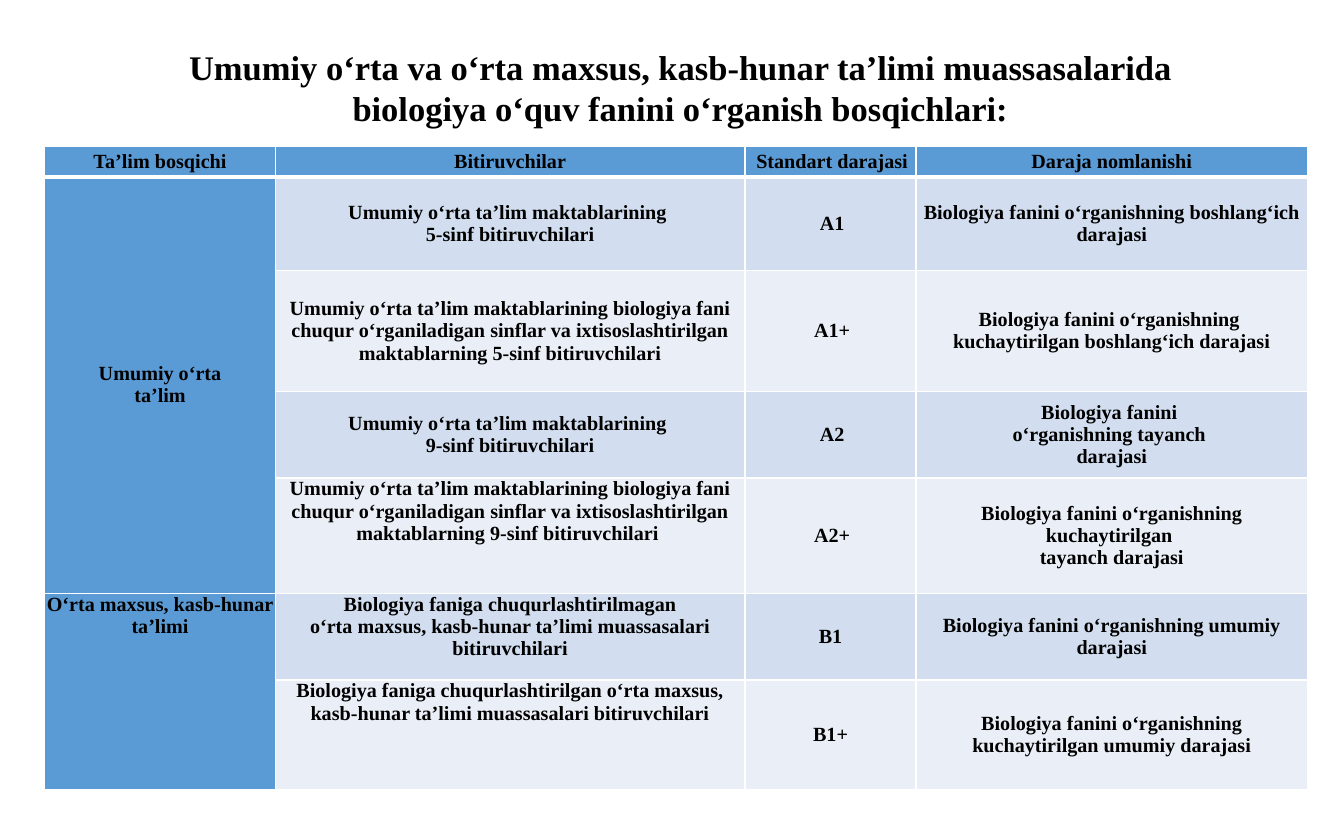
from dataclasses import dataclass

from lxml.etree import SubElement
from pptx import Presentation
from pptx.dml.color import RGBColor
from pptx.enum.text import MSO_ANCHOR, PP_ALIGN
from pptx.oxml.ns import qn
from pptx.slide import Slide
from pptx.table import Table, _Cell
from pptx.text.text import TextFrame
from pptx.util import Cm, Pt

BLACK = RGBColor(0x00, 0x00, 0x00)
WHITE = RGBColor(0xFF, 0xFF, 0xFF)
HEADER_BLUE = RGBColor(0x5B, 0x9B, 0xD5)
BAND_COLORS = (RGBColor(0xD2, 0xDE, 0xEF), RGBColor(0xEA, 0xEF, 0xF7))

CM_PER_INCH = 2.54
SLIDE_WIDTH = Cm(12.99 * CM_PER_INCH)
SLIDE_HEIGHT = Cm(7.88 * CM_PER_INCH)
COLUMN_WIDTHS = (5.66, 11.53, 4.2, 9.61)
LEVEL_COLUMN = 2
LEVEL_INDENT = Cm(0.08)
TITLE = (
    "Umumiy o‘rta va o‘rta maxsus, kasb-hunar ta’limi muassasalarida "
    "biologiya o‘quv fanini o‘rganish bosqichlari:"
)
CELL_FORMAT = {
    "margin_left": 0,
    "margin_right": 0,
    "margin_top": 0,
    "margin_bottom": 0,
}


@dataclass(frozen=True)
class StageRow:
    height: float
    stage: str
    graduates: str
    level: str
    level_name: str
    stage_span: int = 1
    top_columns: tuple[int, ...] = ()
    indented: bool = True

    def texts(self) -> tuple[str, ...]:
        return self.stage, self.graduates, self.level, self.level_name


ROWS = (
    StageRow(0.75, "Ta’lim bosqichi", "Bitiruvchilar", "Standart darajasi", "Daraja nomlanishi"),
    StageRow(
        2.31,
        "Umumiy o‘rta\nta’lim",
        "Umumiy o‘rta ta’lim maktablarining \n5-sinf bitiruvchilari",
        "A1",
        "Biologiya fanini o‘rganishning boshlang‘ich darajasi",
        stage_span=4,
    ),
    StageRow(
        2.96,
        "",
        "Umumiy o‘rta ta’lim maktablarining biologiya fani chuqur o‘rganiladigan "
        "sinflar va ixtisoslashtirilgan maktablarning 5-sinf bitiruvchilari",
        "A1+",
        "Biologiya fanini o‘rganishning \nkuchaytirilgan boshlang‘ich darajasi",
    ),
    StageRow(
        2.13,
        "",
        "Umumiy o‘rta ta’lim maktablarining \n9-sinf bitiruvchilari",
        "A2",
        "Biologiya fanini \no‘rganishning tayanch \ndarajasi",
    ),
    StageRow(
        2.83,
        "",
        "Umumiy o‘rta ta’lim maktablarining biologiya fani chuqur o‘rganiladigan "
        "sinflar va ixtisoslashtirilgan maktablarning 9-sinf bitiruvchilari ",
        "A2+",
        "Biologiya fanini o‘rganishning kuchaytirilgan \ntayanch darajasi",
        top_columns=(1,),
    ),
    StageRow(
        2.13,
        "O‘rta maxsus, kasb-hunar ta’limi",
        "Biologiya faniga chuqurlashtirilmagan\n"
        "o‘rta maxsus, kasb-hunar ta’limi muassasalari bitiruvchilari",
        "B1",
        "Biologiya fanini o‘rganishning umumiy darajasi",
        stage_span=2,
        top_columns=(0, 1),
        indented=False,
    ),
    StageRow(
        2.69,
        "",
        "Biologiya faniga chuqurlashtirilgan o‘rta maxsus, kasb-hunar ta’limi "
        "muassasalari bitiruvchilari",
        "B1+",
        "Biologiya fanini o‘rganishning kuchaytirilgan umumiy darajasi",
        top_columns=(1,),
        indented=False,
    ),
)


def write_text(text_frame: TextFrame, text: str, size: int, indent: int = 0) -> None:
    text_frame.text = text
    font_format = {"name": "Times New Roman", "size": Pt(size), "bold": True}
    for paragraph in text_frame.paragraphs:
        paragraph.alignment = PP_ALIGN.CENTER
        if indent:
            paragraph._p.get_or_add_pPr().set("indent", str(indent))
        for run in paragraph.runs:
            for attribute, value in font_format.items():
                setattr(run.font, attribute, value)
            run.font.color.rgb = BLACK


def draw_borders(cell: _Cell, row_index: int) -> None:
    properties = cell._tc.get_or_add_tcPr()
    widths = {
        "lnL": 1,
        "lnR": 1,
        "lnT": 3 if row_index == 1 else 1,
        "lnB": 3 if row_index == 0 else 1,
    }
    for side, width in widths.items():
        line = SubElement(properties, qn(f"a:{side}"), w=str(Pt(width)))
        fill = SubElement(line, qn("a:solidFill"))
        SubElement(fill, qn("a:srgbClr"), val=str(WHITE))


def draw_row(table: Table, row_index: int, row: StageRow) -> None:
    table.rows[row_index].height = Cm(row.height)
    for column_index, text in enumerate(row.texts()):
        cell = table.cell(row_index, column_index)
        for attribute, value in CELL_FORMAT.items():
            setattr(cell, attribute, value)
        is_top = column_index in row.top_columns
        cell.vertical_anchor = MSO_ANCHOR.TOP if is_top else MSO_ANCHOR.MIDDLE
        draw_borders(cell, row_index)
        is_header = row_index == 0 or column_index == 0
        cell.fill.solid()
        cell.fill.fore_color.rgb = HEADER_BLUE if is_header else BAND_COLORS[(row_index - 1) % 2]
        is_indented = row.indented and column_index == LEVEL_COLUMN
        write_text(cell.text_frame, text, 14, LEVEL_INDENT if is_indented else 0)
    if row.stage_span > 1:
        last_row = row_index + row.stage_span - 1
        table.cell(row_index, 0).merge(table.cell(last_row, 0))


def draw_title(slide: Slide) -> None:
    title = slide.shapes.add_textbox(Cm(3.9), Cm(1), Cm(25.6), Cm(3.33))
    title.text_frame.word_wrap = True
    write_text(title.text_frame, TITLE, 24)


def draw_table(slide: Slide) -> None:
    table = slide.shapes.add_table(
        len(ROWS),
        len(COLUMN_WIDTHS),
        Cm(1.1),
        Cm(3.59),
        Cm(sum(COLUMN_WIDTHS)),
        Cm(sum(row.height for row in ROWS)),
    ).table
    for column, width in zip(table.columns, COLUMN_WIDTHS):
        column.width = Cm(width)
    for row_index, row in enumerate(ROWS):
        draw_row(table, row_index, row)


def main() -> None:
    presentation = Presentation()
    presentation.slide_width = SLIDE_WIDTH
    presentation.slide_height = SLIDE_HEIGHT
    slide = presentation.slides.add_slide(presentation.slide_layouts[6])
    draw_title(slide)
    draw_table(slide)
    presentation.save("out.pptx")


if __name__ == "__main__":
    main()
